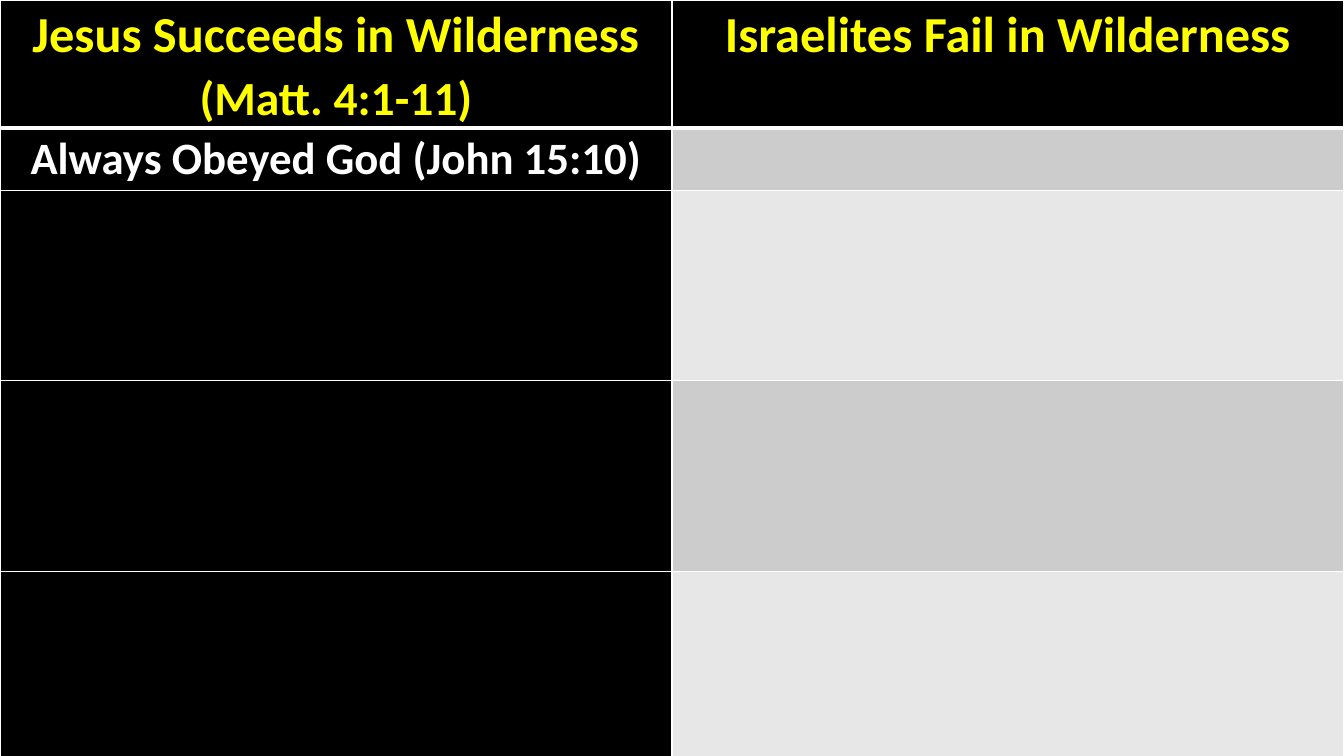
from lxml import etree
from pptx import Presentation
from pptx.dml.color import RGBColor
from pptx.enum.text import PP_ALIGN
from pptx.oxml.ns import qn
from pptx.util import Cm, Pt

CENTER = PP_ALIGN.CENTER
BLANK_LAYOUT = 6

# Content: each cell is a list of (text, style) runs
ROWS = [
    [[("Jesus Succeeds in Wilderness ", "heading"), ("(Matt. 4:1-11)", "verse")],
     [("Israelites Fail in Wilderness", "heading")]],
    [[("Always Obeyed God (John 15:10)", "body")], []],
    [[], []],
    [[], []],
    [[], []],
]


class Theme:
    font = "Calibri"
    black, white, yellow = "000000", "FFFFFF", "FFFF00"
    bands = ("CCCCCC", "E7E7E7")
    text = {"heading": (36, yellow), "verse": (34, yellow), "body": (32, white)}
    line_spacing = 1.07
    thin, thick = 1, 3


# Sizes
PAGE_WIDTH, PAGE_HEIGHT = Cm(33.87), Cm(19.05)
ROW_HEIGHTS = [Cm(2.34), Cm(1.57)] + [Cm(4.8)] * 3
SIDE_MARGIN = Cm(0.18)


def fill_text(cell, runs):
    cell.margin_left = cell.margin_right = SIDE_MARGIN
    cell.margin_top = cell.margin_bottom = 0
    para = cell.text_frame.paragraphs[0]
    para.alignment = CENTER
    para.line_spacing = Theme.line_spacing
    for text, style in runs:
        size, color = Theme.text[style]
        span = para.add_run()
        span.text = text
        span.font.name = Theme.font
        span.font.size = Pt(size)
        span.font.bold = True
        span.font.color.rgb = RGBColor.from_string(color)


def set_borders(cell, widths):
    properties = cell._tc.get_or_add_tcPr()
    for position, (side, width) in enumerate(widths.items()):
        line = etree.Element(qn(f"a:ln{side}"), w=str(Pt(width)))
        solid = etree.SubElement(line, qn("a:solidFill"))
        etree.SubElement(solid, qn("a:srgbClr"), val=Theme.white)
        properties.insert(position, line)


def cell_color(row, column):
    if row == 0 or column == 0:
        return Theme.black
    return Theme.bands[(row - 1) % 2]


def main():
    deck = Presentation()
    deck.slide_width, deck.slide_height = PAGE_WIDTH, PAGE_HEIGHT
    page = deck.slides.add_slide(deck.slide_layouts[BLANK_LAYOUT])
    page.background.fill.solid()
    page.background.fill.fore_color.rgb = RGBColor.from_string(Theme.black)

    # Comparison table across the whole page
    columns = len(ROWS[0])
    table = page.shapes.add_table(len(ROWS), columns, 0, 0,
                                  PAGE_WIDTH, sum(ROW_HEIGHTS)).table
    for column in table.columns:
        column.width = PAGE_WIDTH // columns
    for row, height in zip(table.rows, ROW_HEIGHTS):
        row.height = height

    # Cells, with a thick rule under the heading row
    for r, row in enumerate(ROWS):
        for c, runs in enumerate(row):
            cell = table.cell(r, c)
            cell.fill.solid()
            cell.fill.fore_color.rgb = RGBColor.from_string(cell_color(r, c))
            set_borders(cell, {
                "L": Theme.thin,
                "R": Theme.thin,
                "T": Theme.thick if r == 1 else Theme.thin,
                "B": Theme.thick if r == 0 else Theme.thin,
            })
            if runs:
                fill_text(cell, runs)

    deck.save("out.pptx")


if __name__ == "__main__":
    main()
